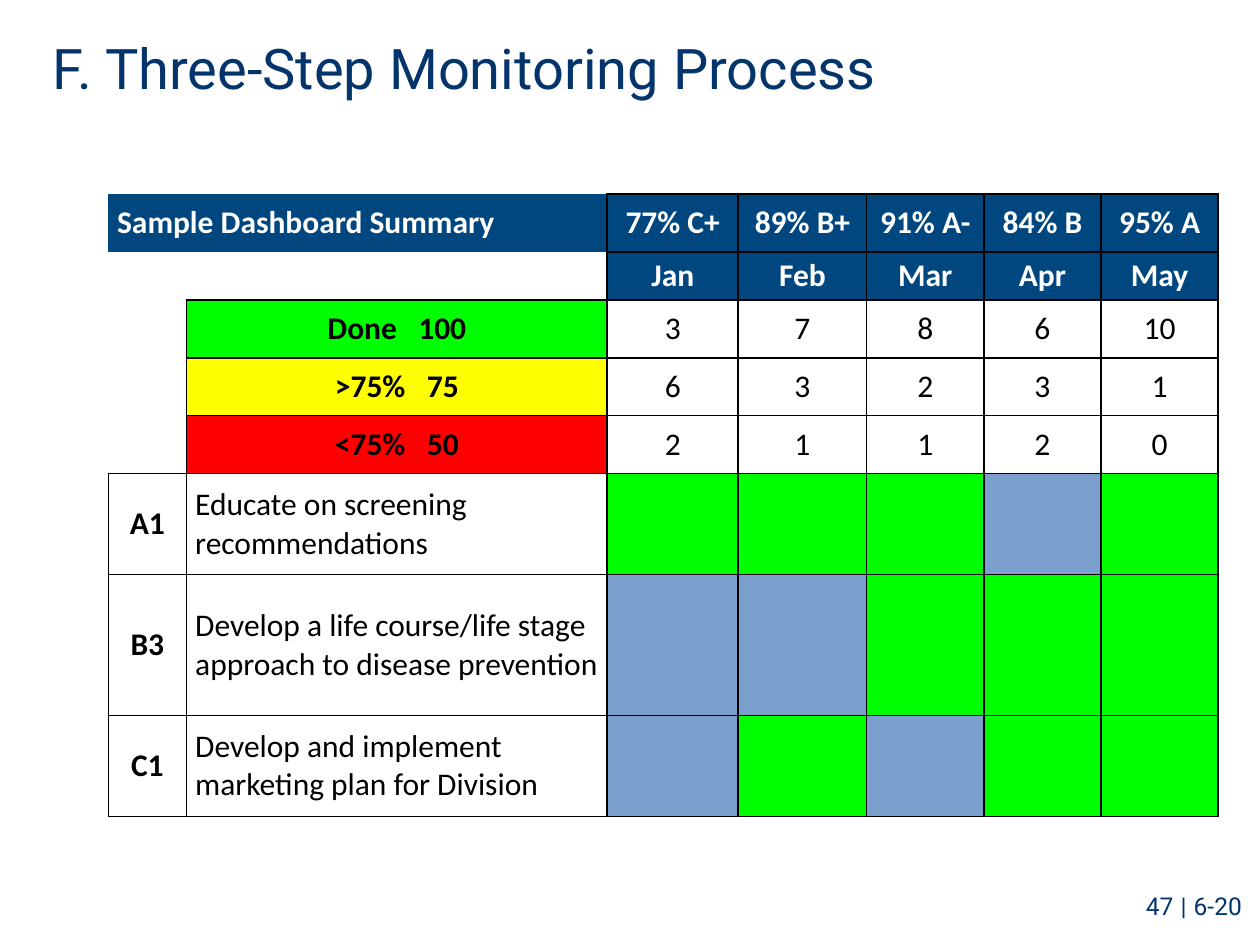
import pptx
import pptx.dml.color
import pptx.enum.text
import pptx.util
import lxml.etree
from pptx.oxml.ns import qn

Inches = pptx.util.Inches
Pt = pptx.util.Pt
LEFT = pptx.enum.text.PP_ALIGN.LEFT
CENTER = pptx.enum.text.PP_ALIGN.CENTER
MIDDLE = pptx.enum.text.MSO_ANCHOR.MIDDLE

COLORS = {
    "navy": "04346C",
    "header": "00467F",
    "white": "FFFFFF",
    "black": "000000",
    "green": "00FF00",
    "yellow": "FFFF00",
    "red": "FF0000",
    "blue": "7BA0CE",
}
COLUMN_WIDTHS = [0.62, 3.34, 1.04, 1.02, 0.93, 0.93, 0.93]
ROW_HEIGHTS = [0.46, 0.38, 0.46, 0.46, 0.46, 0.8, 1.12, 0.8]
FIRST_MONTH = 2
SCORES = ["77% C+", "89% B+", "91% A-", "84% B", "95% A"]
MONTHS = ["Jan", "Feb", "Mar", "Apr", "May"]
RATINGS = [
    ("Done", "100", "green", [3, 7, 8, 6, 10]),
    (">75%", "75", "yellow", [6, 3, 2, 3, 1]),
    ("<75%", "50", "red", [2, 1, 1, 2, 0]),
]
ACTIVITIES = [
    ("A1", "Educate on screening recommendations",
     ["green", "green", "green", "blue", "green"]),
    ("B3", "Develop a life course/life stage approach to disease prevention",
     ["blue", "blue", "green", "green", "green"]),
    ("C1", "Develop and implement marketing plan for Division",
     ["blue", "green", "blue", "green", "green"]),
]
# Sides are named L, R, T and B, as in the table cell XML.
PARTIAL_BORDERS = {
    (0, 0): "R", (0, 1): "R", (1, 0): "", (1, 1): "RB",
    (2, 0): "R", (3, 0): "R", (4, 0): "RB",
}


def format_font(font, size, name, color, bold=False):
    font.size = Pt(size)
    font.name = name
    font.bold = bold
    font.color.rgb = pptx.dml.color.RGBColor.from_string(COLORS[color])


def set_borders(cell, visible_sides):
    properties = cell._tc.get_or_add_tcPr()
    for side in "LRTB":
        line = lxml.etree.SubElement(properties, qn(f"a:ln{side}"), w=str(Pt(1)))
        if side in visible_sides:
            fill = lxml.etree.SubElement(line, qn("a:solidFill"))
            lxml.etree.SubElement(fill, qn("a:srgbClr"), val=COLORS["black"])
        else:
            lxml.etree.SubElement(line, qn("a:noFill"))


def fill_cell(cell, color):
    cell.fill.solid()
    cell.fill.fore_color.rgb = pptx.dml.color.RGBColor.from_string(COLORS[color])


def write_cell(cell, text, color="black", bold=False, alignment=CENTER):
    cell.text_frame.text = text
    paragraph = cell.text_frame.paragraphs[0]
    paragraph.alignment = alignment
    for run in paragraph.runs:
        format_font(run.font, 18, "Calibri", color, bold)


def write_rating(cell, label, points):
    """Write label and points, parted by one widely tracked space."""
    write_cell(cell, label, bold=True)
    paragraph = cell.text_frame.paragraphs[0]
    for text in (" ", points):
        run = paragraph.add_run()
        run.text = text
        format_font(run.font, 18, "Calibri", "black", True)
    paragraph.runs[1]._r.get_or_add_rPr().set("spc", "810")


def add_title(slide):
    title = slide.shapes.title
    title.left, title.top = Inches(0.32), Inches(0)
    title.width, title.height = Inches(7.46), Inches(1.06)
    title.text_frame.text = "F. Three-Step Monitoring Process"
    title.text_frame.vertical_anchor = MIDDLE
    paragraph = title.text_frame.paragraphs[0]
    paragraph.alignment = LEFT
    format_font(paragraph.runs[0].font, 32, "Roboto", "navy")


def add_empty_table(slide):
    """Add the grid with its sizes, margins and borders, without a style."""
    table = slide.shapes.add_table(
        len(ROW_HEIGHTS), len(COLUMN_WIDTHS), Inches(0.86), Inches(1.54),
        Inches(sum(COLUMN_WIDTHS)), Inches(sum(ROW_HEIGHTS))).table
    table.first_row = table.horz_banding = False
    for column, width in zip(table.columns, COLUMN_WIDTHS):
        column.width = Inches(width)
    for row, height in zip(table.rows, ROW_HEIGHTS):
        row.height = Inches(height)
    for row_index in range(len(ROW_HEIGHTS)):
        for column_index in range(len(COLUMN_WIDTHS)):
            cell = table.cell(row_index, column_index)
            cell.vertical_anchor = MIDDLE
            cell.margin_left = cell.margin_right = Inches(0.07)
            cell.margin_top = cell.margin_bottom = 0
            set_borders(cell, PARTIAL_BORDERS.get((row_index, column_index), "LRTB"))
            cell.fill.background()
    return table


def add_dashboard(slide):
    table = add_empty_table(slide)
    heading = table.cell(0, 0)
    heading.merge(table.cell(0, 1))
    fill_cell(heading, "header")
    write_cell(heading, "Sample Dashboard Summary", "white", True, LEFT)

    for row, labels in enumerate([SCORES, MONTHS]):
        for column, label in enumerate(labels, FIRST_MONTH):
            fill_cell(table.cell(row, column), "header")
            write_cell(table.cell(row, column), label, "white", True)

    for row, (label, points, color, counts) in enumerate(RATINGS, 2):
        fill_cell(table.cell(row, 1), color)
        write_rating(table.cell(row, 1), label, points)
        for column, count in enumerate(counts, FIRST_MONTH):
            write_cell(table.cell(row, column), str(count))

    for row, (code, activity, colors) in enumerate(ACTIVITIES, 2 + len(RATINGS)):
        write_cell(table.cell(row, 0), code, bold=True)
        write_cell(table.cell(row, 1), activity, alignment=LEFT)
        for column, color in enumerate(colors, FIRST_MONTH):
            fill_cell(table.cell(row, column), color)


def add_page_number(slide):
    box = slide.shapes.add_textbox(Inches(8.95), Inches(6.97), Inches(1.05), Inches(0.53))
    box.text_frame.word_wrap = True
    paragraph = box.text_frame.paragraphs[0]
    paragraph.alignment = CENTER
    for text in ["47", " ", "|", " ", "6-20"]:
        run = paragraph.add_run()
        run.text = text
        if text == " ":
            format_font(run.font, 18, "Calibri", "black")
        else:
            format_font(run.font, 14, "Roboto", "navy")


def main():
    presentation = pptx.Presentation()
    presentation.slide_width, presentation.slide_height = Inches(10), Inches(7.5)
    slide = presentation.slides.add_slide(presentation.slide_layouts[5])
    add_title(slide)
    add_dashboard(slide)
    add_page_number(slide)
    presentation.save("out.pptx")


if __name__ == "__main__":
    main()
